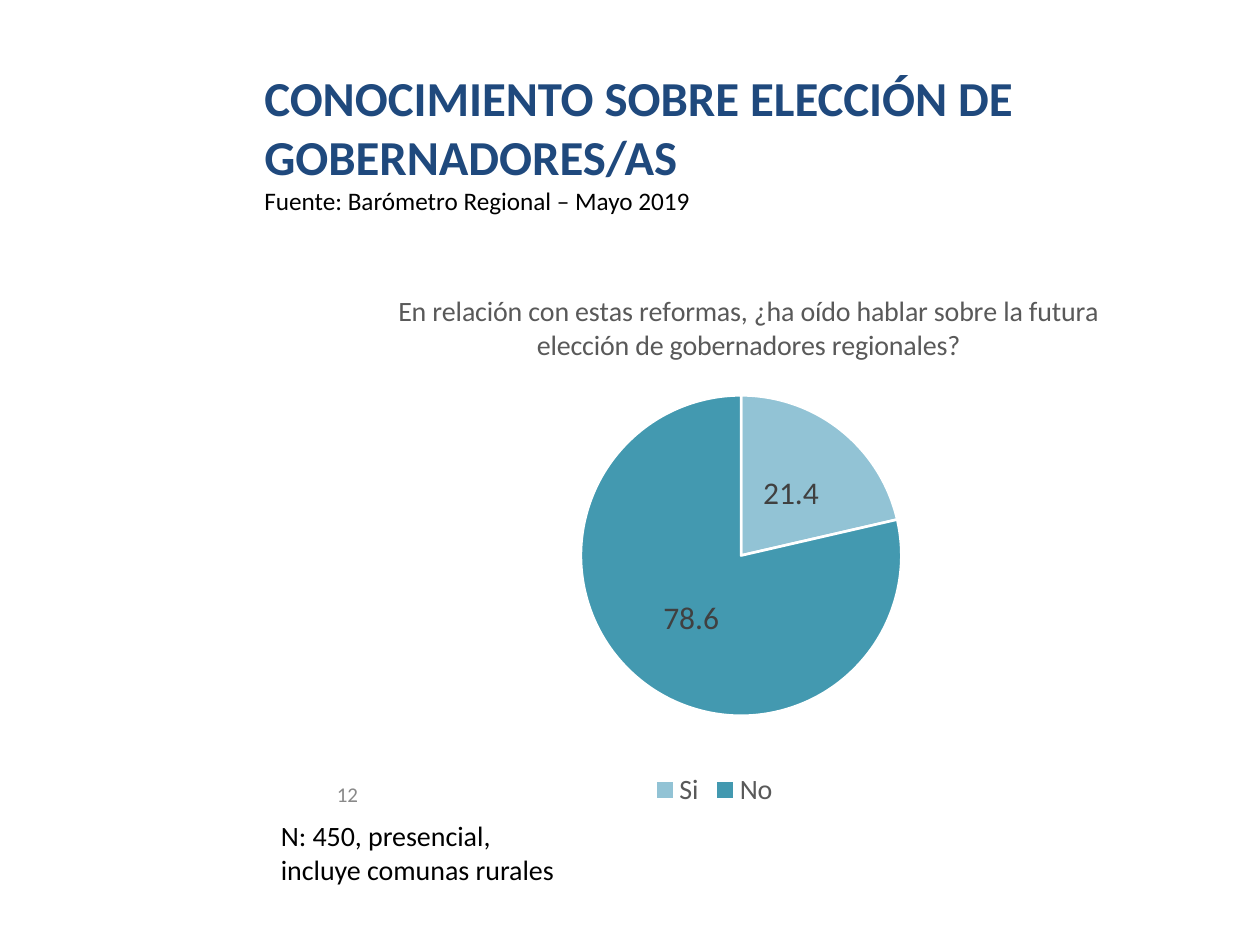
from lxml import etree
from pptx import Presentation
from pptx.chart.data import CategoryChartData
from pptx.dml.color import RGBColor
from pptx.enum.chart import XL_CHART_TYPE, XL_LABEL_POSITION, XL_LEGEND_POSITION
from pptx.enum.text import MSO_ANCHOR, PP_ALIGN
from pptx.oxml.ns import qn
from pptx.util import Inches, Pt

PIE = XL_CHART_TYPE.PIE
CENTER = XL_LABEL_POSITION.CENTER
BOTTOM = XL_LEGEND_POSITION.BOTTOM
TOP, MIDDLE = MSO_ANCHOR.TOP, MSO_ANCHOR.MIDDLE
LEFT, RIGHT = PP_ALIGN.LEFT, PP_ALIGN.RIGHT

HEADING = "CONOCIMIENTO SOBRE ELECCIÓN DE GOBERNADORES/AS"
SOURCE = "Fuente: Barómetro Regional – Mayo 2019"
QUESTION = ("En relación con estas reformas, ¿ha oído hablar sobre la futura "
            "elección de gobernadores regionales?")
ANSWERS = [("Si", 21.4, "92C3D5"), ("No", 78.6, "4399B0")]
TEXTS = [
    ((0.69, 6.15, 2.25, 0.3), MIDDLE, RIGHT, [("12", 12, "898989", False)]),
    ((2, 0.5, 7.68, 1.25), MIDDLE, LEFT,
     [(HEADING, 27.9, "1F497D", True), (SOURCE, 14.4, "000000", False)]),
    ((2.13, 6.45, 2.49, 0.76), TOP, LEFT,
     [("N: 450, presencial, incluye comunas rurales", 16, "000000", False)]),
]
CHART_BOX = (2.13, 1.65, 7.08, 4.8)
TITLE_PLACE = {"x": 0.14, "y": 0.13}
PLOT_PLACE = {"x": 0.28, "y": 0.31, "w": 0.5, "h": 0.53}


def color(value):
    return RGBColor.from_string(value)


def style(font, size, value, bold=False):
    font.name = "Calibri"
    font.size = Pt(size)
    font.color.rgb = color(value)
    font.bold = bold


def set_layout(parent, before, place, inner=False):
    for old in parent.findall(qn("c:layout")):
        parent.remove(old)
    layout = etree.Element(qn("c:layout"))
    manual = etree.SubElement(layout, qn("c:manualLayout"))
    if inner:
        etree.SubElement(manual, qn("c:layoutTarget")).set("val", "inner")
    for axis in "xy":
        etree.SubElement(manual, qn(f"c:{axis}Mode")).set("val", "edge")
    for key, value in place.items():
        etree.SubElement(manual, qn(f"c:{key}")).set("val", str(value))
    parent.find(qn(before)).addprevious(layout)


def add_text(slide, box, anchor, alignment, lines):
    frame = slide.shapes.add_textbox(*map(Inches, box)).text_frame
    frame.word_wrap = True
    frame.vertical_anchor = anchor
    paragraph = frame.paragraphs[0]
    paragraph.alignment = alignment
    for index, (text, *look) in enumerate(lines):
        if index:
            paragraph.add_line_break()
        run = paragraph.add_run()
        run.text = text
        style(run.font, *look)


def add_pie(slide):
    data = CategoryChartData(number_format="0.0")
    data.categories = [name for name, _, _ in ANSWERS]
    data.add_series("Series 1", [value for _, value, _ in ANSWERS])
    chart = slide.shapes.add_chart(PIE, *map(Inches, CHART_BOX), data).chart
    style(chart.font, 10, "000000")

    chart.has_title = True
    title = chart.chart_title
    title.include_in_layout = False
    paragraph = title.text_frame.paragraphs[0]
    paragraph.text = QUESTION
    style(paragraph.font, 16, "595959")
    set_layout(title._element, "c:overlay", TITLE_PLACE)

    chart.has_legend = True
    chart.legend.position = BOTTOM
    chart.legend.include_in_layout = False
    style(chart.legend.font, 16, "595959")

    plot = chart.plots[0]
    plot.vary_by_categories = True
    set_layout(plot._element.getparent(), "c:pieChart", PLOT_PLACE, True)
    series = plot.series[0]
    for index, (_, _, fill) in enumerate(ANSWERS):
        point = series.points[index].format
        point.fill.solid()
        point.fill.fore_color.rgb = color(fill)
        point.line.color.rgb = color("FFFFFF")
        point.line.width = Pt(1.5)
    labels = series.data_labels
    labels.show_value = True
    labels.show_percentage = False
    labels.number_format = "0.0"
    labels.number_format_is_linked = False
    labels.position = CENTER
    style(labels.font, 18, "404040")


presentation = Presentation()
presentation.slide_width = Inches(10)
presentation.slide_height = Inches(7.5)
slide = presentation.slides.add_slide(presentation.slide_layouts[6])
add_pie(slide)
for text in TEXTS:
    add_text(slide, *text)
presentation.save("out.pptx")
